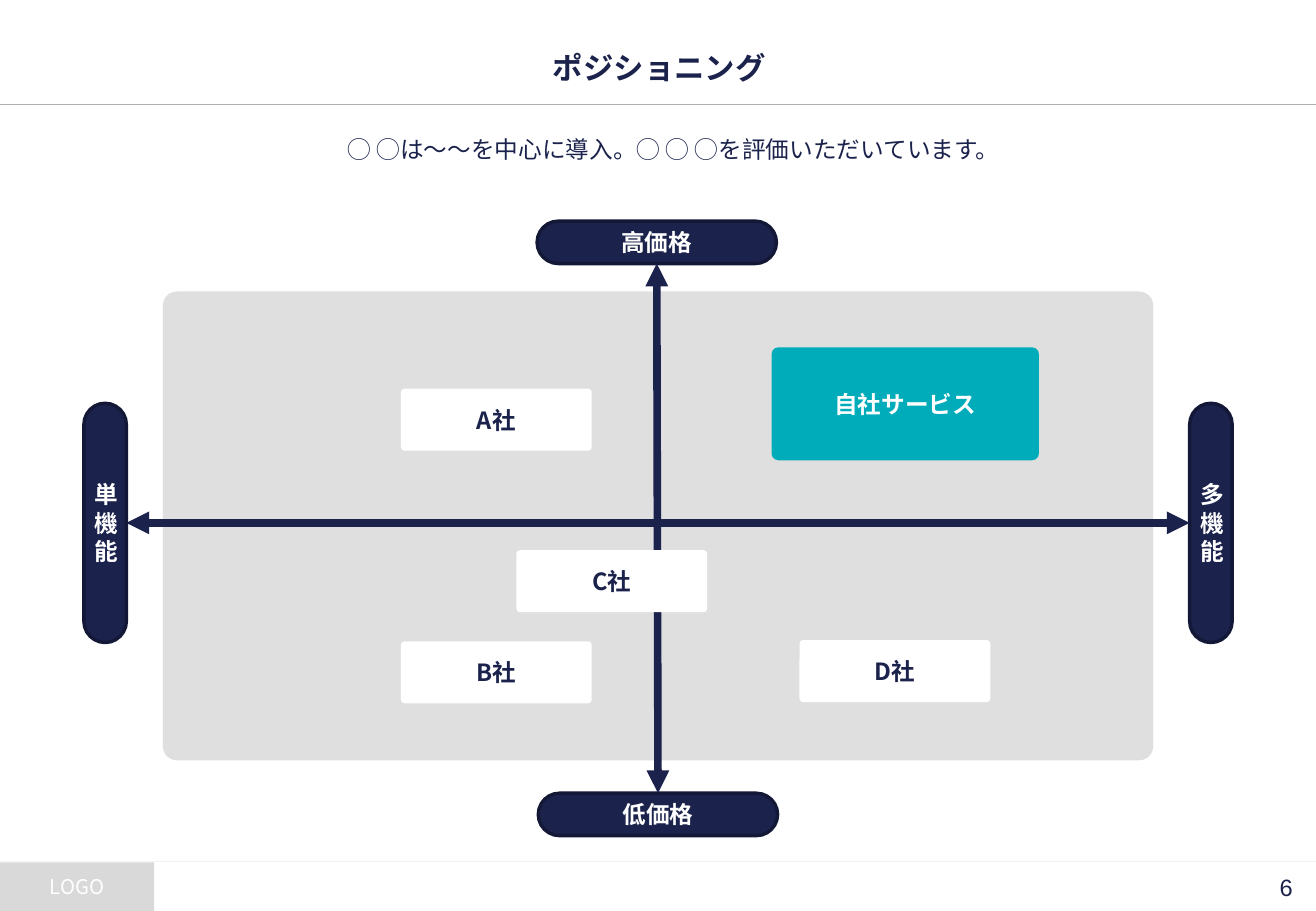
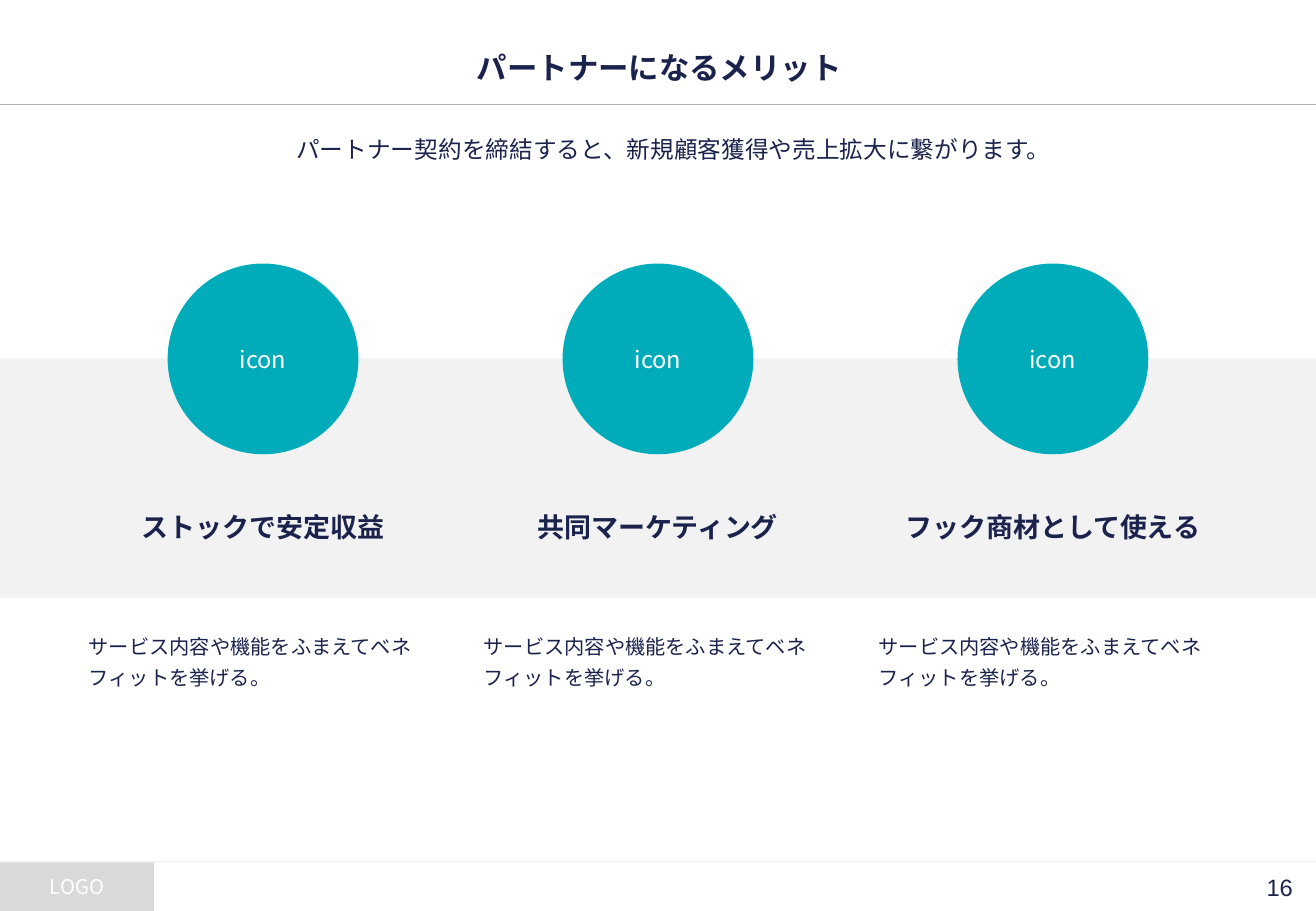
from pptx import Presentation
from pptx.dml.color import RGBColor
from pptx.enum import shapes, text
from pptx.oxml.ns import qn
from pptx.util import Inches, Pt
from lxml import etree

WIDTH, HEIGHT = 10.83, 7.5
FONT = "Noto Sans CJK JP"
COLORS = {
    "navy": "1B224C", "outline": "131837", "teal": "00ACBA", "white": "FFFFFF",
    "panel": "DFDFDF", "band": "F2F2F2", "logo": "D9D9D9", "rule": "AFAFAF",
}
LEFT, CENTER, RIGHT = text.PP_ALIGN.LEFT, text.PP_ALIGN.CENTER, text.PP_ALIGN.RIGHT
TOP, MIDDLE = text.MSO_ANCHOR.TOP, text.MSO_ANCHOR.MIDDLE
RECT, ROUND, OVAL = (shapes.MSO_SHAPE.RECTANGLE, shapes.MSO_SHAPE.ROUNDED_RECTANGLE,
                     shapes.MSO_SHAPE.OVAL)
THIN = (0.04,) * 4

POSITIONING = {
    "title": "ポジショニング",
    "lead": "◯ ◯は〜〜を中心に導入。◯ ◯ ◯を評価いただいています。",
    "number": 6,
}
AXIS_ENDS = {
    "top": ("高価格", (4.42, 1.82, 1.97, 0.35)),
    "bottom": ("低価格", (4.43, 6.53, 1.97, 0.35)),
    "left": ("単機能", (0.69, 3.32, 0.35, 1.97)),
    "right": ("多機能", (9.79, 3.32, 0.35, 1.97)),
}
AXES = [("left", 3, "right", 1), ("top", 2, "bottom", 0)]
OWN_SERVICE = ("自社サービス", (6.35, 2.86, 2.2, 0.93))
RIVALS = [("A社", 3.3, 3.2), ("B社", 3.3, 5.28), ("C社", 4.25, 4.53), ("D社", 6.58, 5.27)]
RIVAL_SIZE = (1.57, 0.51)

MERITS = {
    "title": "パートナーになるメリット",
    "lead": "パートナー契約を締結すると、新規顧客獲得や売上拡大に繋がります。",
    "number": 16,
}
BENEFIT = "サービス内容や機能をふまえてベネフィットを挙げる。"
MERIT_COLUMNS = [("ストックで安定収益", BENEFIT), ("共同マーケティング", BENEFIT),
                 ("フック商材として使える", BENEFIT)]
COLUMN_LEFT, COLUMN_STEP, COLUMN_WIDTH, ICON_SIZE = 0.69, 3.25, 2.95, 1.57


def rgb(name):
    return RGBColor.from_string(COLORS[name])


def place(shape, at):
    shape.left, shape.top, shape.width, shape.height = map(Inches, at)


def write(shape, words, size=14, color="navy", bold=False, align=CENTER, anchor=MIDDLE,
          insets=THIN, spacing=None, after=None, font=FONT):
    frame = shape.text_frame
    frame.text = words
    frame.word_wrap = True
    frame.auto_size = text.MSO_AUTO_SIZE.NONE
    frame.vertical_anchor = anchor
    (frame.margin_left, frame.margin_top,
     frame.margin_right, frame.margin_bottom) = map(Inches, insets)
    para = frame.paragraphs[0]
    para.alignment = align
    if spacing:
        para.line_spacing = spacing
    if after:
        para.space_after = Pt(after)
    span = para.runs[0]
    span.font.size, span.font.bold, span.font.name = Pt(size), bold, font
    span.font.color.rgb = rgb(color)
    etree.SubElement(span.font._element, qn("a:ea")).set("typeface", font)
    return para


def add_text(page, words, at, **style):
    return write(page.shapes.add_textbox(*map(Inches, at)), words, **style)


def add_block(page, kind, at, fill, corner=None, outline=None):
    block = page.shapes.add_shape(kind, *map(Inches, at))
    block.shadow.inherit = False
    block.fill.solid()
    block.fill.fore_color.rgb = rgb(fill)
    if corner is not None:
        block.adjustments[0] = corner
    if outline:
        block.line.color.rgb = rgb(outline)
        block.line.width = Pt(2)
    else:
        block.line.fill.background()
    return block


def add_line(page, start, end, color, width=0.75):
    line = page.shapes.add_connector(shapes.MSO_CONNECTOR.STRAIGHT,
                                     *map(Inches, (*start, *end)))
    line.line.color.rgb = rgb(color)
    line.line.width = Pt(width)
    etree.SubElement(line._element.spPr, qn("a:effectLst"))
    return line


def add_page(deck, content):
    """Add a slide with the shared title, lead, rules and footer."""
    page = deck.slides.add_slide(deck.slide_layouts[5])
    add_line(page, (0, 7.09), (WIDTH, 7.09), "band")
    logo = add_block(page, RECT, (0, 7.1, 1.27, 0.4), "logo")
    write(logo, "LOGO", size=12, color="white")
    add_line(page, (0, 0.86), (WIDTH, 0.86), "rule")
    place(page.shapes.title, (0.7, 0.34, 9.45, 0.43))
    write(page.shapes.title, content["title"], size=18, bold=True)
    lead = add_text(page, content["lead"], (0.69, 1, 9.46, 0.65), anchor=TOP, spacing=1.3)
    indents = lead._p.get_or_add_pPr()
    indents.set("marL", str(Inches(0.5)))
    indents.set("indent", str(Inches(-0.25)))
    add_text(page, str(content["number"]), (8.9, 7.1, 1.94, 0.4), align=RIGHT,
             insets=(0.08, 0.08, 0.2, 0.08), font="Arial")
    return page


def add_axis(page, begin, begin_side, end, end_side):
    axis = add_line(page, (0, 0), (1, 1), "navy", 4.5)
    axis.begin_connect(begin, begin_side)
    axis.end_connect(end, end_side)
    for tip in ("a:headEnd", "a:tailEnd"):
        etree.SubElement(axis.line._get_or_add_ln(), qn(tip)).set("type", "triangle")


def build_positioning(deck):
    page = add_page(deck, POSITIONING)
    add_block(page, ROUND, (1.34, 2.4, 8.15, 3.86), "panel", 0.03)
    pills = {}
    for side, (label, at) in AXIS_ENDS.items():
        pills[side] = add_block(page, ROUND, at, "navy", 0.5, "outline")
        write(pills[side], label, color="white", bold=True)
    for begin, begin_side, end, end_side in AXES:
        add_axis(page, pills[begin], begin_side, pills[end], end_side)
    label, at = OWN_SERVICE
    write(add_block(page, ROUND, at, "teal", 0.06), label, color="white", bold=True)
    for label, left, top in RIVALS:
        card = add_block(page, ROUND, (left, top, *RIVAL_SIZE), "white", 0.06)
        write(card, label, bold=True)


def build_merits(deck):
    page = add_page(deck, MERITS)
    add_block(page, RECT, (0, 2.95, WIDTH, 1.97), "band")
    for index, (heading, benefit) in enumerate(MERIT_COLUMNS):
        left = COLUMN_LEFT + index * COLUMN_STEP
        icon_left = left + (COLUMN_WIDTH - ICON_SIZE) / 2
        icon = add_block(page, OVAL, (icon_left, 2.17, ICON_SIZE, ICON_SIZE), "teal")
        write(icon, "icon", color="white")
        add_text(page, heading, (left, 3.94, COLUMN_WIDTH, 0.79), size=16, bold=True, after=4)
        add_text(page, benefit, (left, 5.12, COLUMN_WIDTH, 0.59), size=12, align=LEFT,
                 anchor=TOP, spacing=1.3, after=4)


def main():
    deck = Presentation()
    deck.slide_width, deck.slide_height = Inches(WIDTH), Inches(HEIGHT)
    build_positioning(deck)
    build_merits(deck)
    deck.save("out.pptx")


if __name__ == "__main__":
    main()
